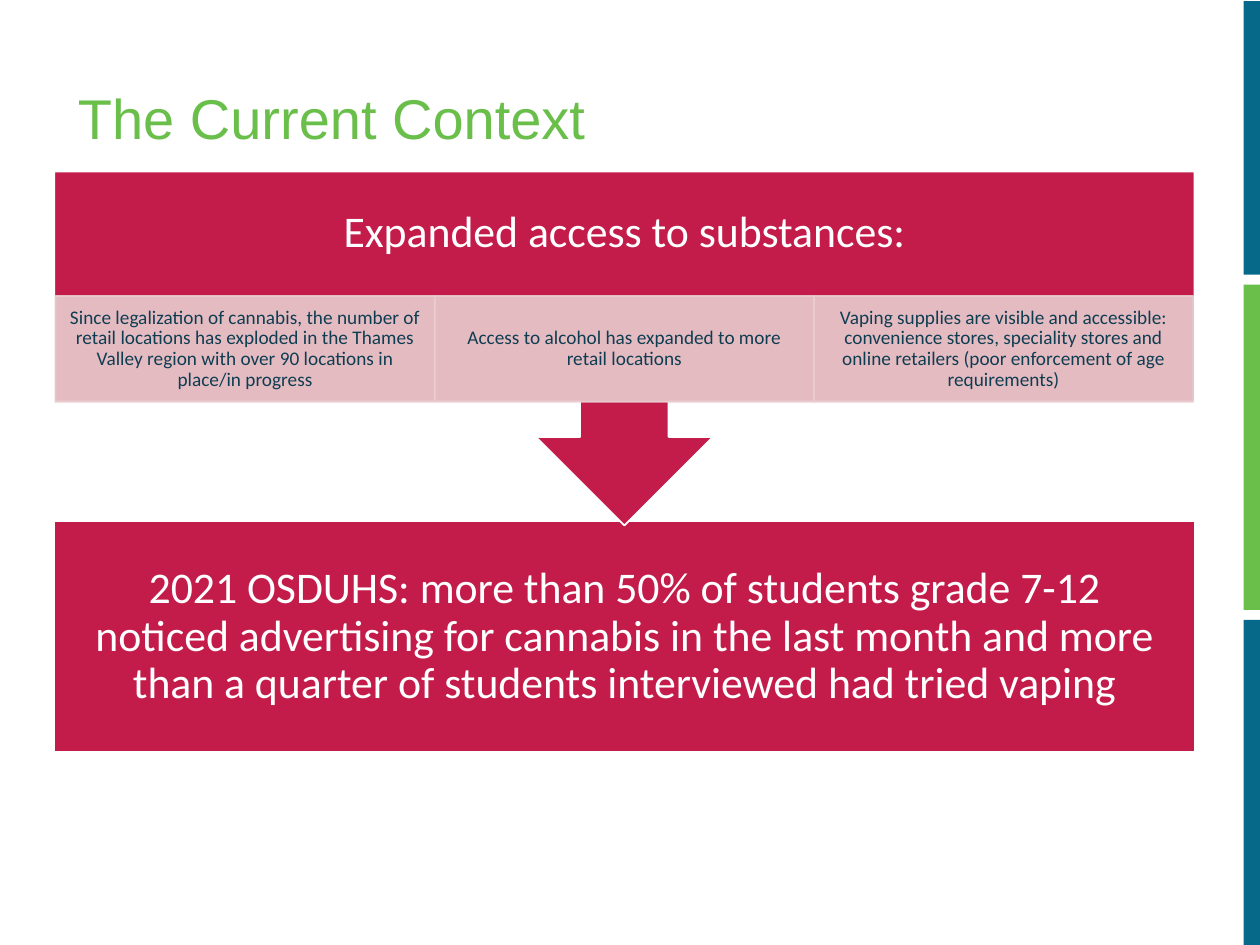
from lxml import etree
from pptx import Presentation
from pptx.dml.color import RGBColor
from pptx.enum.shapes import MSO_SHAPE
from pptx.enum.text import MSO_ANCHOR, PP_ALIGN
from pptx.oxml.ns import qn
from pptx.util import Inches, Pt

RECTANGLE = MSO_SHAPE.RECTANGLE
CALLOUT = MSO_SHAPE.UP_ARROW_CALLOUT
MIDDLE = MSO_ANCHOR.MIDDLE
LEFT, CENTER = PP_ALIGN.LEFT, PP_ALIGN.CENTER

TEAL, GREEN, CRIMSON = "06698A", "6ABF4B", "C31C4A"
PINK, NAVY, WHITE = "E9CDD0", "0E3D51", "FFFFFF"


def color(hex_string):
    return RGBColor.from_string(hex_string)


class SlideBuilder:
    body_font = "Calibri"
    title_font = "Arial"
    heading_size = 25
    detail_size = 11

    def __init__(self, page):
        self.page = page

    def block(self, left, top, width, height, fill, line=None, kind=RECTANGLE, opacity=100):
        shape = self.page.shapes.add_shape(
            kind, Inches(left), Inches(top), Inches(width), Inches(height))
        shape.shadow.inherit = False
        shape.fill.solid()
        shape.fill.fore_color.rgb = color(fill)
        if line:
            shape.line.color.rgb = color(line)
            shape.line.width = Pt(1)
        else:
            shape.line.fill.background()
        if opacity < 100:
            for tint in shape._element.spPr.iter(qn("a:srgbClr")):
                etree.SubElement(tint, qn("a:alpha"), val=str(opacity * 1000))
        return shape

    def label(self, left, top, width, height):
        return self.page.shapes.add_textbox(
            Inches(left), Inches(top), Inches(width), Inches(height))

    def set_text(self, shape, text, size, ink, margins, font=body_font, align=CENTER):
        frame = shape.text_frame
        frame.text = text
        frame.word_wrap = True
        frame.vertical_anchor = MIDDLE
        side, edge = (Inches(margin) for margin in margins)
        frame.margin_left = frame.margin_right = side
        frame.margin_top = frame.margin_bottom = edge
        para = frame.paragraphs[0]
        para.alignment = align
        para.line_spacing = 0.9
        for span in para.runs:
            span.font.name = font
            span.font.size = Pt(size)
            span.font.color.rgb = color(ink)

    def title(self, text):
        self.set_text(self.label(0.52, 0.4, 9.05, 1.12), text, 32, GREEN,
                      (0.1, 0.05), self.title_font, LEFT)

    def heading(self, shape, text):
        self.set_text(shape, text, self.heading_size, WHITE, (0.19, 0.19))

    def detail(self, left, top, width, height, text):
        cell = self.block(left, top, width, height, PINK, PINK, opacity=90)
        self.set_text(cell, text, self.detail_size, NAVY, (0.09, 0.02))


def main():
    deck = Presentation()
    deck.slide_width, deck.slide_height = Inches(10), Inches(7.5)
    builder = SlideBuilder(deck.slides.add_slide(deck.slide_layouts[6]))

    # Side bars
    for top, height, fill in ((0.01, 2.17, TEAL), (2.26, 2.58, GREEN), (4.92, 2.58, TEAL)):
        builder.block(9.87, top, 0.13, height, fill)

    builder.title("The Current Context")

    # Conclusion
    left, width = 0.43, 9.05
    conclusion = builder.block(left, 4.14, width, 1.83, CRIMSON, WHITE)
    builder.heading(conclusion, "2021 OSDUHS: more than 50% of students grade 7-12 noticed advertising "
                    "for cannabis in the last month and more than a quarter of students "
                    "interviewed had tried vaping")

    # Callout pointing down, with an upright heading over it
    callout = builder.block(left, 1.36, width, 2.81, CRIMSON, WHITE, CALLOUT)
    callout.rotation = 180
    builder.heading(builder.label(left, 1.36, width, 0.99), "Expanded access to substances:")

    # Three details across the callout
    details = (
        "Since legalization of cannabis, the number of retail locations has exploded in the "
        "Thames Valley region with over 90 locations in place/in progress",
        "Access to alcohol has expanded to more retail locations",
        "Vaping supplies are visible and accessible: convenience stores, speciality stores and "
        "online retailers (poor enforcement of age requirements)",
    )
    cell_width = 3.01
    for column, text in enumerate(details):
        builder.detail(0.44 + column * cell_width, 2.35, cell_width, 0.84, text)

    deck.save("out.pptx")


if __name__ == "__main__":
    main()
